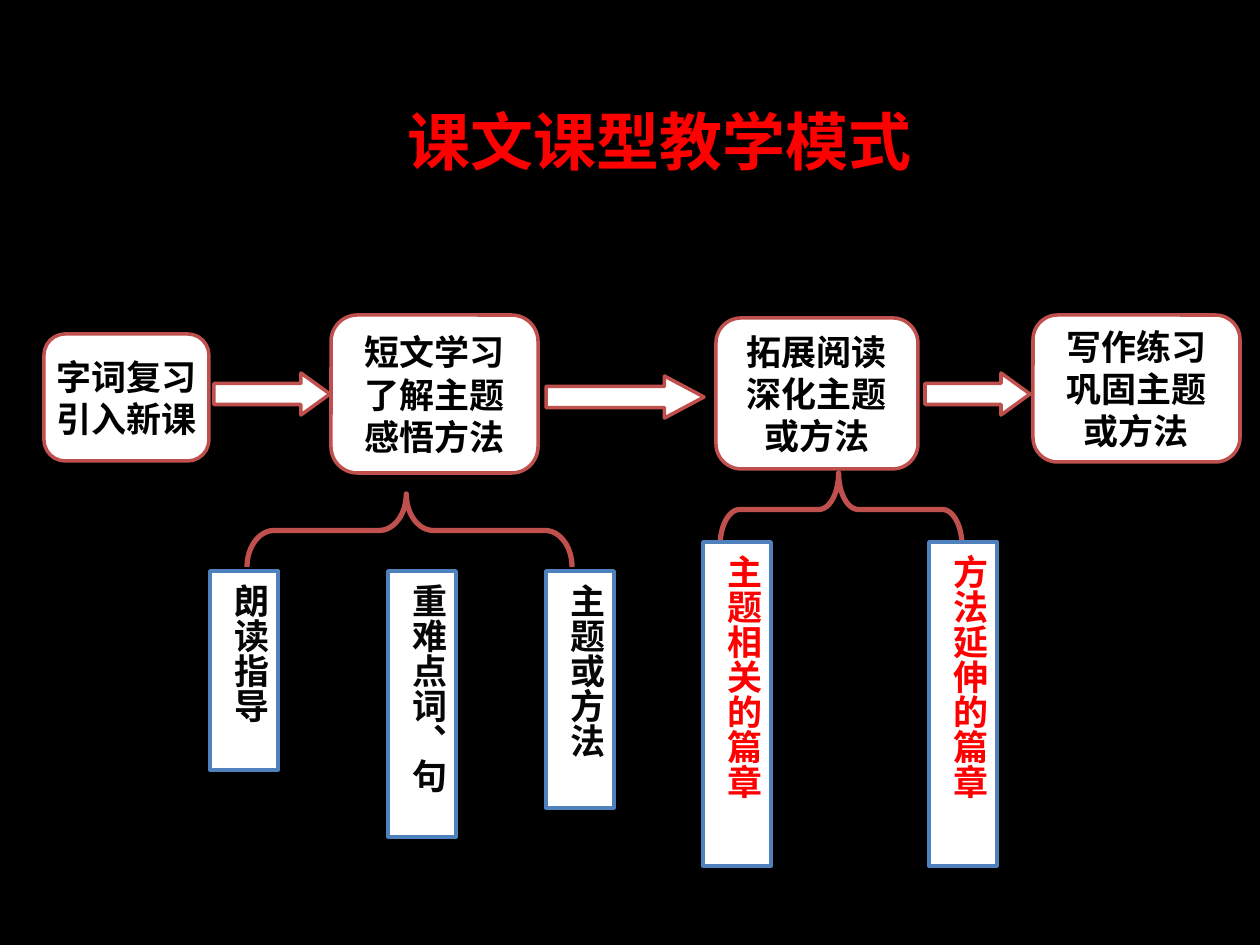
from pptx import Presentation
from pptx.dml.color import RGBColor
from pptx.enum.shapes import MSO_SHAPE
from pptx.enum.text import MSO_ANCHOR, MSO_AUTO_SIZE, PP_ALIGN
from pptx.oxml.ns import qn
from pptx.util import Emu, Pt

ROUNDED, RECTANGLE = MSO_SHAPE.ROUNDED_RECTANGLE, MSO_SHAPE.RECTANGLE
ARROW, BRACE = MSO_SHAPE.RIGHT_ARROW, MSO_SHAPE.LEFT_BRACE
TOP, MIDDLE = MSO_ANCHOR.TOP, MSO_ANCHOR.MIDDLE
LEFT, CENTER = PP_ALIGN.LEFT, PP_ALIGN.CENTER
NO_FIT = MSO_AUTO_SIZE.NONE

BLACK = RGBColor(0x00, 0x00, 0x00)
INK = RGBColor(0x06, 0x06, 0x06)
WHITE = RGBColor(0xFF, 0xFF, 0xFF)
RED = RGBColor(0xFF, 0x00, 0x00)
BRICK = RGBColor(0xC0, 0x50, 0x4D)
BLUE = RGBColor(0x4F, 0x81, 0xBD)

FONT = "Noto Sans CJK SC"
PX_PER_INCH = 126


def px(length):
    return Emu(round(length * 914400 / PX_PER_INCH))


def write_text(shape, lines, size=20, color=BLACK, align=CENTER,
               anchor=MIDDLE, wrap=False, vertical=False):
    frame = shape.text_frame
    frame.text = "\n".join(lines)
    frame.auto_size = NO_FIT
    frame.word_wrap = wrap
    frame.vertical_anchor = anchor
    if vertical:
        frame._txBody.bodyPr.set("vert", "eaVert")
    for paragraph in frame.paragraphs:
        paragraph.alignment = align
        for run in paragraph.runs:
            font = run.font
            font.name, font.size, font.bold = FONT, Pt(size), True
            font.color.rgb = color
            # East Asian typeface follows the Latin one
            east_asian = font._element.makeelement(qn("a:ea"), {"typeface": FONT})
            font._element.find(qn("a:latin")).addnext(east_asian)


def add_outlined(slide, kind, box, line=BRICK, width=2, fill=WHITE, adjustments=()):
    shape = slide.shapes.add_shape(kind, *map(px, box))
    shape.shadow.inherit = False
    if fill is None:
        shape.fill.background()
    else:
        shape.fill.solid()
        shape.fill.fore_color.rgb = fill
    shape.line.color.rgb = line
    shape.line.width = Pt(width)
    for index, value in enumerate(adjustments):
        shape.adjustments[index] = value
    return shape


def add_title(slide, box):
    title = slide.shapes.title
    title.left, title.top, title.width, title.height = map(px, box)
    write_text(title, ["课文课型教学模式"], size=36, color=RED, anchor=TOP)


def add_step(slide, box, lines):
    write_text(add_outlined(slide, ROUNDED, box, adjustments=[0.167]), lines)


def add_arrow(slide, box):
    # The arrowhead is 29 px long, whatever the arrow's length
    add_outlined(slide, ARROW, box, adjustments=[0.5, 29 / box[3]]
                 if box[2] < 150 else [0.5, 0.94])


def add_brace(slide, box, curve):
    """Draw a brace pointing up that fills the box, by a quarter turn."""
    left, top, width, height = box
    shift = (width - height) / 2
    upright = (left + shift, top - shift, height, width)
    brace = add_outlined(slide, BRACE, upright, width=3, fill=None,
                         adjustments=[curve, 0.51])
    brace.rotation = 90


def add_branch(slide, top, brace_box, curve, tags, color):
    """Place a brace and the vertical tags below it."""
    add_brace(slide, brace_box, curve)
    for left, height, text in tags:
        tag = add_outlined(slide, RECTANGLE, (left, top, 68, height), line=BLUE)
        write_text(tag, [text], color=color, align=LEFT, anchor=TOP,
                   wrap=True, vertical=True)


def main():
    presentation = Presentation()
    presentation.slide_width, presentation.slide_height = px(1260), px(945)
    slide = presentation.slides.add_slide(presentation.slide_layouts[5])
    slide.background.fill.solid()
    slide.background.fill.fore_color.rgb = BLACK

    add_title(slide, (393, 96, 534, 89))

    # Four teaching steps
    steps = [
        ((44, 334, 165, 127), ["字词复习", "引入新课"]),
        ((331, 315, 207, 158), ["短文学习", "了解主题", "感悟方法"]),
        ((716, 318, 202, 151), ["拓展阅读", "深化主题", "或方法"]),
        ((1033, 315, 207, 147), ["写作练习", "巩固主题", "或方法"]),
    ]
    for box, lines in steps:
        add_step(slide, box, lines)
    for box in [(214, 373, 116, 42), (546, 376, 158, 42), (925, 373, 105, 42)]:
        add_arrow(slide, box)

    # Details of the second and third steps
    add_branch(slide, 571, (247, 494, 325, 73), 0.37,
               [(210, 199, "朗读指导"), (388, 266, "重难点词、句"),
                (546, 237, "主题或方法")], INK)
    add_branch(slide, 542, (720, 473, 242, 73), 0.27,
               [(703, 324, "主题相关的篇章"), (929, 324, "方法延伸的篇章")], RED)

    presentation.save("out.pptx")


if __name__ == "__main__":
    main()
